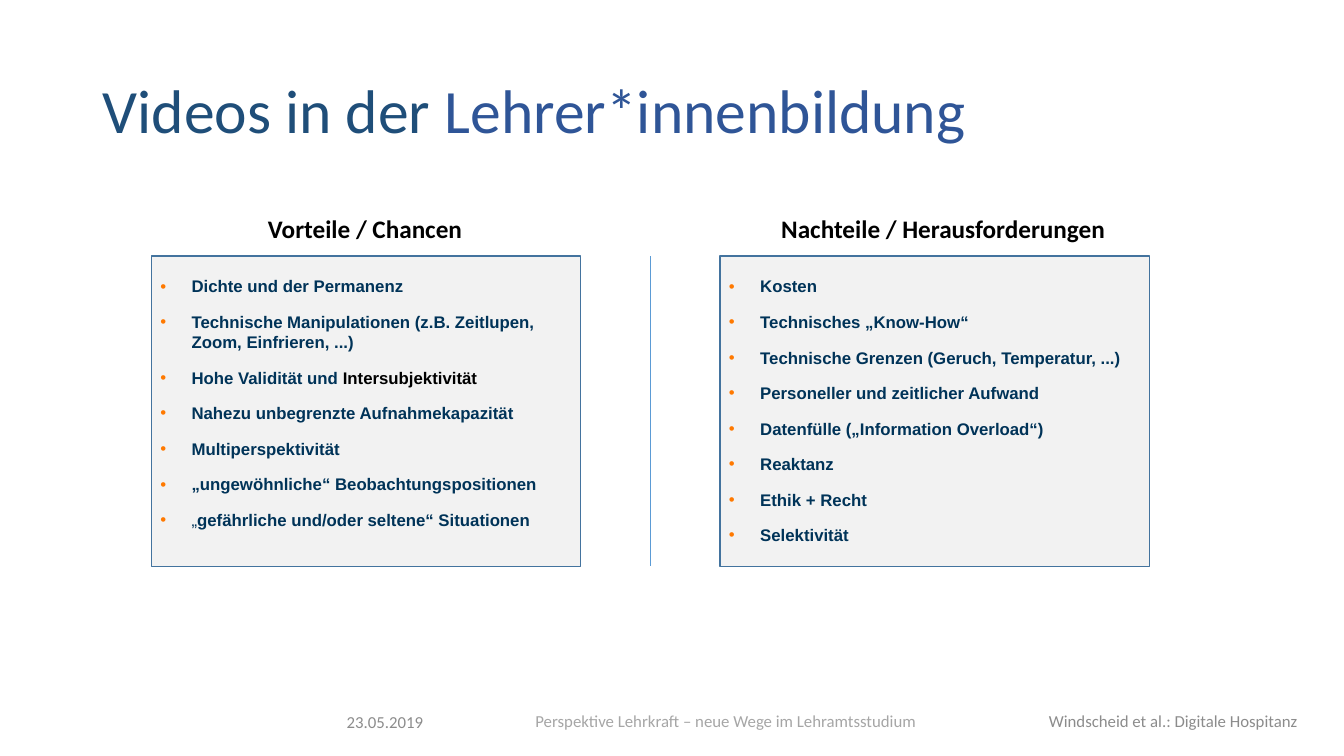
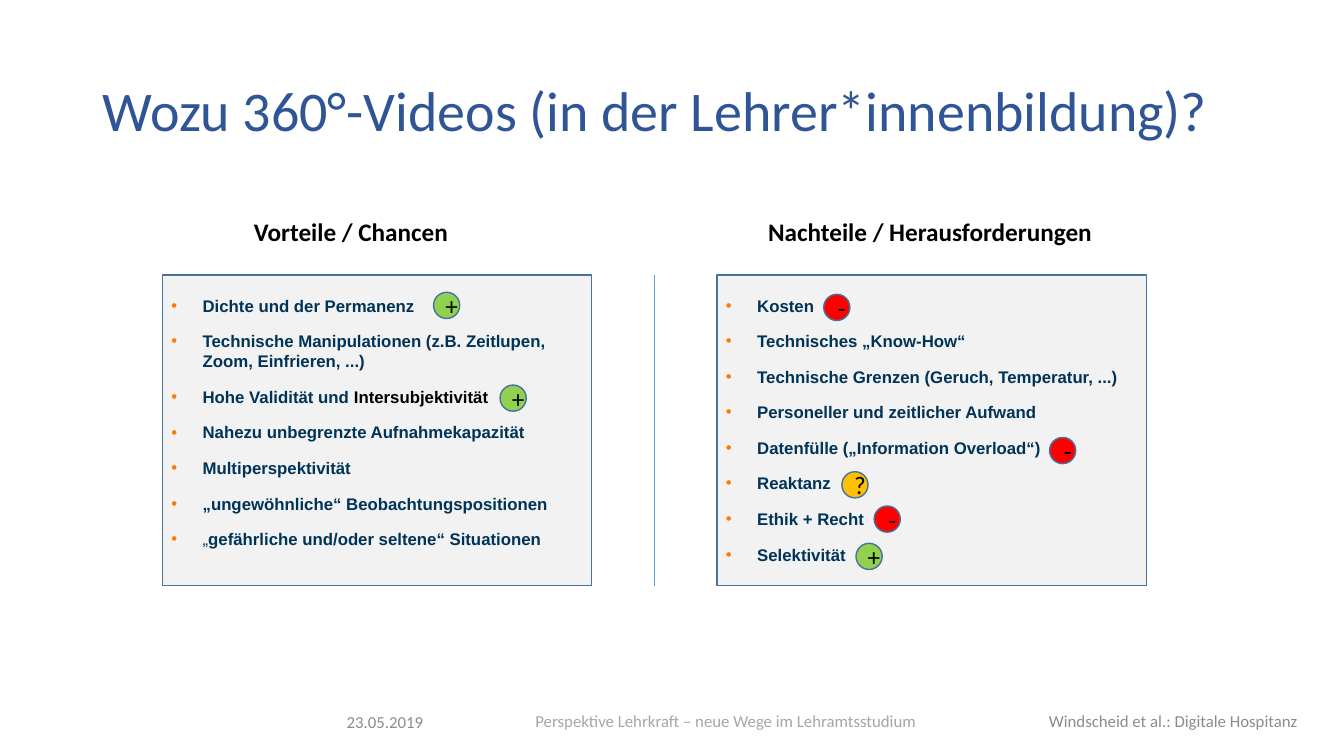
from lxml import etree
from pptx import Presentation
from pptx.dml.color import RGBColor
from pptx.enum.shapes import MSO_CONNECTOR, MSO_SHAPE
from pptx.enum.text import MSO_ANCHOR, PP_ALIGN
from pptx.oxml.ns import qn
from pptx.util import Inches, Pt

LEFT, CENTER, RIGHT = PP_ALIGN.LEFT, PP_ALIGN.CENTER, PP_ALIGN.RIGHT
TOP, MIDDLE = MSO_ANCHOR.TOP, MSO_ANCHOR.MIDDLE
RECTANGLE, OVAL = MSO_SHAPE.RECTANGLE, MSO_SHAPE.OVAL
STRAIGHT = MSO_CONNECTOR.STRAIGHT

TITLE_ONLY = 5
HEADING_FONT, LIST_FONT = "Calibri", "Arial"
BLACK, NAVY, ORANGE = "000000", "003358", "FF7900"
TITLE_DARK, TITLE_BLUE = "1F4E79", "2F5597"
FOOTER_GREY, FOOTER_LIGHT = "8C8C8C", "A6A6A6"
PANEL_FILL, OUTLINE, DIVIDER = "F2F2F2", "43739E", "5B9BD5"
MARK_FILLS = {"+": "92D050", "-": "FF0000", "?": "FFC000"}

PANEL_WIDTH, PANEL_HEIGHT = 4.26, 3.08
PANEL_PADDING, LIST_OFFSET = 0.09, 0.2
BULLET_INDENT = 0.31
MARK_SIZE = 0.26

FOOTERS = [
    ("23.05.2019", (3.34, 6.96, 1.16, 0.4), LEFT, FOOTER_GREY),
    ("Perspektive Lehrkraft – neue Wege im Lehramtsstudium",
     (4.9, 6.95, 4.6, 0.4), CENTER, FOOTER_LIGHT),
    ("Windscheid et al.: Digitale Hospitanz",
     (9.97, 6.95, 3, 0.4), RIGHT, FOOTER_GREY),
]

# Each list item is a sequence of (text, format) spans.
ADVANTAGES = [
    [("Dichte und der Permanenz", {})],
    [("Technische Manipulationen (z.B. Zeitlupen, Zoom, Einfrieren, ...)", {})],
    [("Hohe Validität und ", {}), ("Intersubjektivität", {"color": BLACK})],
    [("Nahezu unbegrenzte Aufnahmekapazität", {})],
    [("Multiperspektivität", {})],
    [("„ungewöhnliche“ Beobachtungspositionen", {})],
    [("„", {"bold": False}), ("gefährliche und/oder seltene“ Situationen", {})],
]
DRAWBACKS = [[(text, {})] for text in (
    "Kosten",
    "Technisches „Know-How“",
    "Technische Grenzen (Geruch, Temperatur, ...)",
    "Personeller und zeitlicher Aufwand",
    "Datenfülle („Information Overload“)",
    "Reaktanz",
    "Ethik + Recht",
    "Selektivität",
)]

MARKS = [
    ("+", 4.3, 2.9),
    ("+", 4.96, 3.82),
    ("-", 8.17, 2.92),
    ("-", 10.41, 4.34),
    ("?", 8.35, 4.68),
    ("-", 8.67, 5.02),
    ("+", 8.49, 5.39),
]


def rgb(value):
    return RGBColor.from_string(value)


def add_span(para, text, size=12, font=HEADING_FONT, color=BLACK, bold=False):
    span = para.add_run()
    span.text = text
    span.font.size = Pt(size)
    span.font.name = font
    span.font.color.rgb = rgb(color)
    span.font.bold = bold


def add_box(page, area, wrap=True, anchor=TOP):
    frame = page.shapes.add_textbox(*map(Inches, area)).text_frame
    frame.word_wrap = wrap
    frame.vertical_anchor = anchor
    return frame


def add_label(page, text, area, align=LEFT, wrap=True, anchor=TOP, **style):
    para = add_box(page, area, wrap, anchor).paragraphs[0]
    para.alignment = align
    add_span(para, text, **style)


def add_outlined(page, kind, area, fill):
    shape = page.shapes.add_shape(kind, *map(Inches, area))
    shape.shadow.inherit = False
    shape.fill.solid()
    shape.fill.fore_color.rgb = rgb(fill)
    shape.line.color.rgb = rgb(OUTLINE)
    shape.line.width = Pt(1)
    return shape


def set_bullet(para):
    props = para._p.get_or_add_pPr()
    props.set("marL", str(Inches(BULLET_INDENT)))
    props.set("indent", str(-Inches(BULLET_INDENT)))
    color = etree.SubElement(props, qn("a:buClr"))
    etree.SubElement(color, qn("a:srgbClr"), val=ORANGE)
    etree.SubElement(props, qn("a:buFont"), typeface=LIST_FONT)
    etree.SubElement(props, qn("a:buChar"), char="•")


def add_panel(page, left, top, items):
    add_outlined(page, RECTANGLE, (left, top, PANEL_WIDTH, PANEL_HEIGHT), PANEL_FILL)
    frame = add_box(page, (left + PANEL_PADDING, top + LIST_OFFSET,
                           PANEL_WIDTH - 2 * PANEL_PADDING,
                           PANEL_HEIGHT - LIST_OFFSET))
    frame.margin_left = frame.margin_top = 0
    frame.margin_right = frame.margin_bottom = 0
    for index, spans in enumerate(items):
        para = frame.add_paragraph() if index else frame.paragraphs[0]
        set_bullet(para)
        para.space_before = Pt(11 if index else 0)
        for text, style in spans:
            add_span(para, text, **{"font": LIST_FONT, "color": NAVY,
                                    "bold": True, **style})


def add_divider(page, x, top):
    line = page.shapes.add_connector(
        STRAIGHT, Inches(x), Inches(top), Inches(x), Inches(top + PANEL_HEIGHT))
    line.line.color.rgb = rgb(DIVIDER)
    line.line.width = Pt(1)
    etree.SubElement(line._element.spPr, qn("a:effectLst"))


def add_comparison(page, top, panel_lefts, heading_lefts, heading_top):
    """Two headed lists with a divider halfway between them."""
    columns = [("Vorteile / Chancen", 2.14, ADVANTAGES),
               ("Nachteile / Herausforderungen", 3.44, DRAWBACKS)]
    for (heading, width, items), left, heading_left in zip(
            columns, panel_lefts, heading_lefts):
        add_label(page, heading, (heading_left, heading_top, width, 0.4),
                  wrap=False, size=18, bold=True)
        add_panel(page, left, top, items)
    add_divider(page, (sum(panel_lefts) + PANEL_WIDTH) / 2, top)


def add_mark(page, symbol, left, top):
    """Rating circle whose symbol sits slightly right of the centre."""
    mark = add_outlined(page, OVAL, (left, top, MARK_SIZE, MARK_SIZE),
                        MARK_FILLS[symbol])
    frame = mark.text_frame
    frame.word_wrap = False
    frame.vertical_anchor = MIDDLE
    frame.margin_left = Inches(0.1)
    frame.margin_right = frame.margin_top = frame.margin_bottom = 0
    para = frame.paragraphs[0]
    para.alignment = CENTER
    add_span(para, symbol, size=18)


def add_page(deck, title_spans, title_width, title_size):
    page = deck.slides.add_slide(deck.slide_layouts[TITLE_ONLY])
    title = page.shapes.title
    title.left, title.top = Inches(0.92), Inches(0.4)
    title.width, title.height = Inches(title_width), Inches(1.45)
    title.text_frame.word_wrap = True
    title.text_frame.vertical_anchor = MIDDLE
    para = title.text_frame.paragraphs[0]
    para.alignment = LEFT
    para.line_spacing = 0.9
    for text, color in title_spans:
        add_span(para, text, size=title_size, color=color)
    for text, area, align, color in FOOTERS:
        add_label(page, text, area, align=align, anchor=MIDDLE, color=color)
    return page


def main():
    deck = Presentation()
    deck.slide_width, deck.slide_height = Inches(13.33), Inches(7.5)

    page = add_page(deck, [("Videos in der ", TITLE_DARK),
                           ("Lehrer*innenbildung", TITLE_BLUE)], 9.63, 44)
    add_comparison(page, 2.54, (1.5, 7.14), (2.56, 7.65), 2.07)

    page = add_page(deck, [("Wozu 360°-Videos (in der Lehrer*innenbildung)?",
                            TITLE_BLUE)], 11.5, 40)
    add_comparison(page, 2.73, (1.61, 7.11), (2.42, 7.52), 2.1)
    for symbol, left, top in MARKS:
        add_mark(page, symbol, left, top)

    deck.save("out.pptx")


if __name__ == "__main__":
    main()
